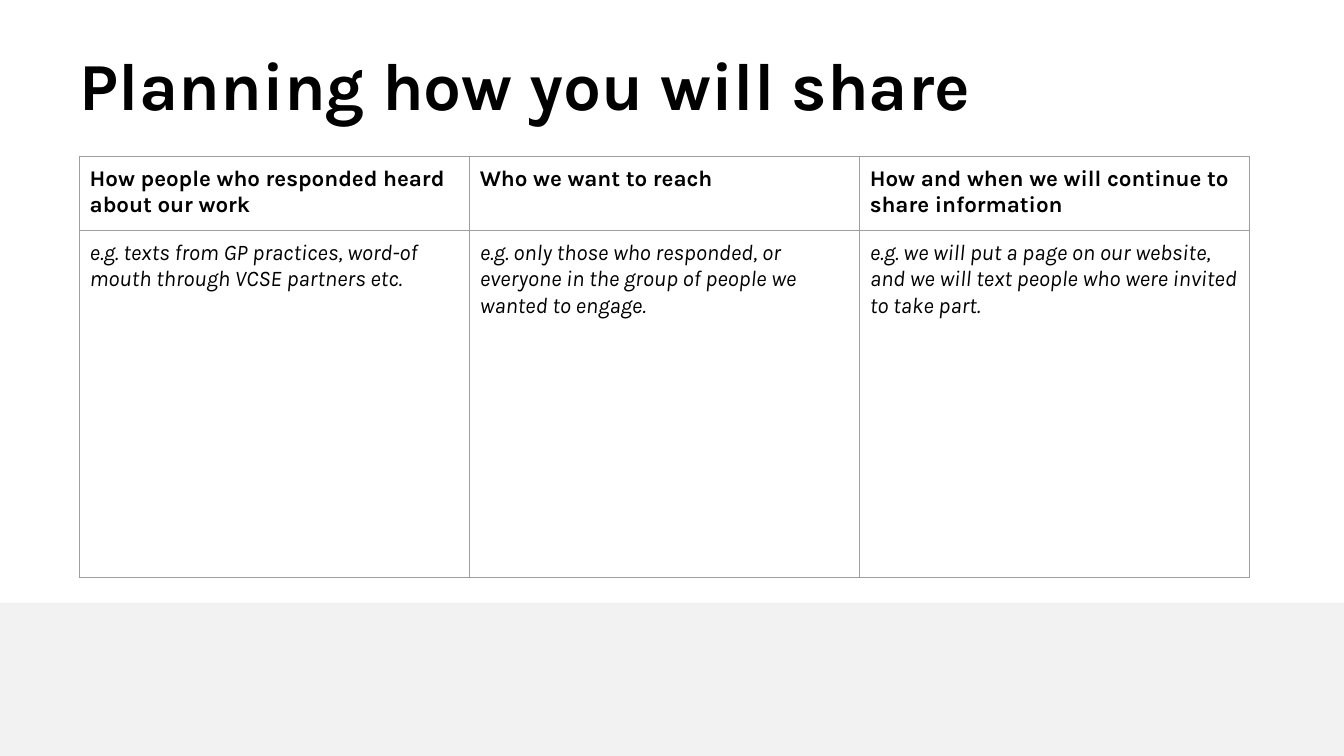
from dataclasses import dataclass

import lxml.etree
import pptx
import pptx.dml.color
import pptx.enum.shapes
import pptx.enum.text
import pptx.oxml.ns
import pptx.util

Pt = pptx.util.Pt
FONT = "Karla"
BLACK = "000000"
BAND_GREY = "F2F2F2"
BORDER_GREY = "9E9E9E"
LEFT = 56.9
COLUMN_WIDTH = 278.64
HEADER_HEIGHT, EXAMPLE_HEIGHT = 48.24, 248.4
CELL_MARGIN = 7.2


@dataclass
class PlanColumn:
    heading: str
    example: str


COLUMNS = [
    PlanColumn(
        "How people who responded heard about our work",
        "e.g. texts from GP practices, word-of mouth through VCSE partners etc.",
    ),
    PlanColumn(
        "Who we want to reach",
        "e.g. only those who responded, or everyone in the group of people we wanted to engage.",
    ),
    PlanColumn(
        "How and when we will continue to share information",
        "e.g. we will put a page on our website, and we will text people who were invited to take part.",
    ),
]


def color(value: str) -> pptx.dml.color.RGBColor:
    return pptx.dml.color.RGBColor.from_string(value)


def write_text(text_frame, text: str, *, size: float, bold: bool = False,
               italic: bool = False, line_spacing: float = 1.0, margin: float = 0) -> None:
    text_frame.word_wrap = True
    text_frame.margin_left = text_frame.margin_right = Pt(margin)
    text_frame.margin_top = text_frame.margin_bottom = Pt(margin)
    paragraph = text_frame.paragraphs[0]
    paragraph.line_spacing = line_spacing
    run = paragraph.add_run()
    run.text = text
    run.font.name = FONT
    run.font.size = Pt(size)
    run.font.bold = bold
    run.font.italic = italic
    run.font.color.rgb = color(BLACK)


def add_borders(cell, border_color: str, width: float) -> None:
    properties = cell._tc.get_or_add_tcPr()
    qn = pptx.oxml.ns.qn
    # Border lines come before the fill in the cell properties
    for index, side in enumerate(("a:lnL", "a:lnR", "a:lnT", "a:lnB")):
        line = lxml.etree.Element(qn(side), w=str(Pt(width)))
        fill = lxml.etree.SubElement(line, qn("a:solidFill"))
        lxml.etree.SubElement(fill, qn("a:srgbClr"), val=border_color)
        properties.insert(index, line)


def fill_cell(cell, text: str, *, bold: bool = False, italic: bool = False) -> None:
    cell.fill.background()
    cell.margin_left = cell.margin_right = Pt(CELL_MARGIN)
    cell.margin_top = cell.margin_bottom = Pt(CELL_MARGIN)
    write_text(cell.text_frame, text, size=16, bold=bold, italic=italic, margin=CELL_MARGIN)
    add_borders(cell, BORDER_GREY, 0.75)


def add_plan_table(slide) -> None:
    table = slide.shapes.add_table(
        2, len(COLUMNS), Pt(LEFT), Pt(111.6),
        Pt(COLUMN_WIDTH * len(COLUMNS)), Pt(HEADER_HEIGHT + EXAMPLE_HEIGHT),
    ).table
    table.horz_banding = False
    table.rows[0].height = Pt(HEADER_HEIGHT)
    table.rows[1].height = Pt(EXAMPLE_HEIGHT)
    for index, column in enumerate(COLUMNS):
        table.columns[index].width = Pt(COLUMN_WIDTH)
        fill_cell(table.cell(0, index), column.heading, bold=True)
        fill_cell(table.cell(1, index), column.example, italic=True)


def main() -> None:
    presentation = pptx.Presentation()
    presentation.slide_width, presentation.slide_height = Pt(960), Pt(540)
    slide = presentation.slides.add_slide(presentation.slide_layouts[6])

    # Grey band along the bottom
    band = slide.shapes.add_shape(
        pptx.enum.shapes.MSO_SHAPE.RECTANGLE, Pt(0), Pt(430.5), Pt(960), Pt(109.5))
    band.shadow.inherit = False
    band.fill.solid()
    band.fill.fore_color.rgb = color(BAND_GREY)
    band.line.fill.background()

    # Title
    title = slide.shapes.add_textbox(Pt(LEFT), Pt(38.2), Pt(797.8), Pt(49.7))
    title.text_frame.vertical_anchor = pptx.enum.text.MSO_ANCHOR.MIDDLE
    write_text(title.text_frame, "Planning how you will share",
               size=48, bold=True, line_spacing=0.9)

    # Planning table
    add_plan_table(slide)
    presentation.save("out.pptx")


if __name__ == "__main__":
    main()
